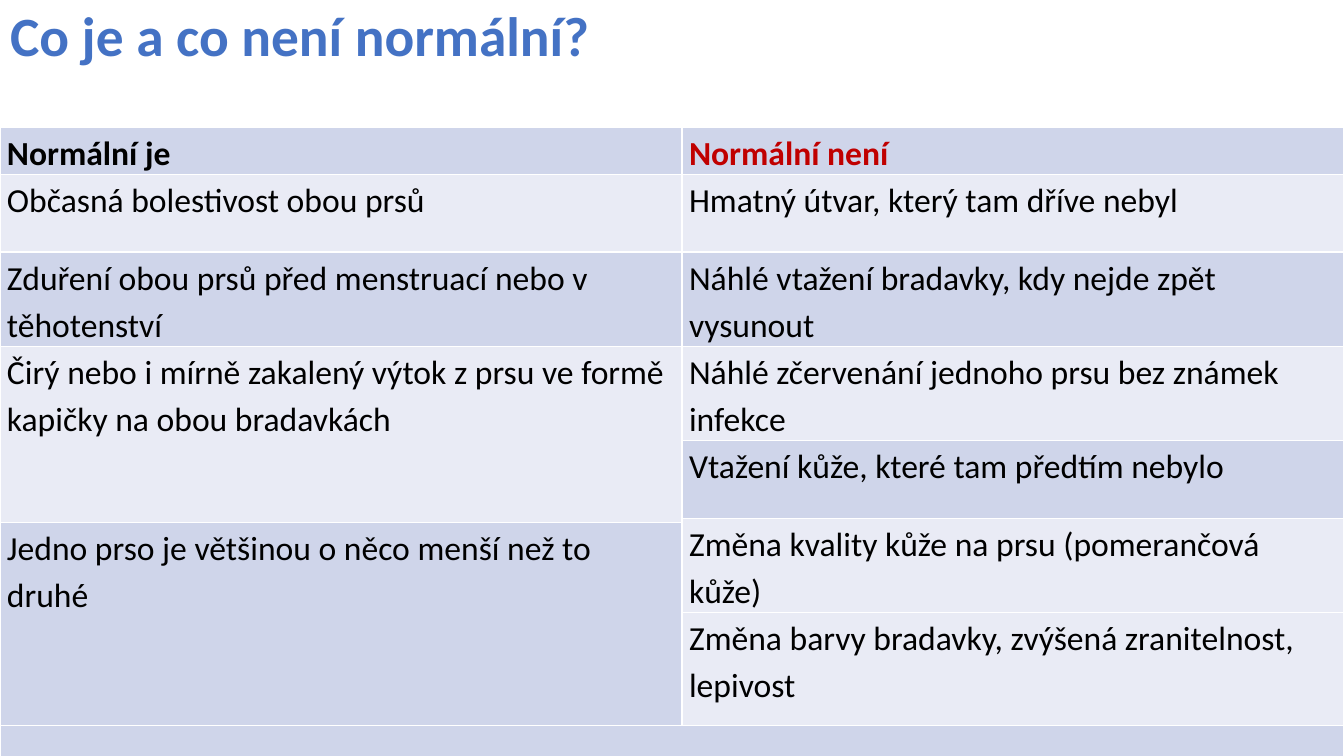
from pptx import Presentation
from pptx.dml.color import RGBColor
from pptx.enum.text import MSO_ANCHOR, MSO_AUTO_SIZE, PP_ALIGN
from pptx.oxml import parse_xml
from pptx.oxml.ns import nsdecls
from pptx.util import Pt

BLUE = RGBColor(0x44, 0x72, 0xC4)
RED = RGBColor(0xC0, 0x00, 0x00)
BLACK = RGBColor(0x00, 0x00, 0x00)
WHITE = RGBColor(0xFF, 0xFF, 0xFF)
DARK = RGBColor(0xCF, 0xD5, 0xEA)
LIGHT = RGBColor(0xE9, 0xEB, 0xF5)

WIDTH, HEIGHT = 960, 540
COLS = [487.2, 472.8]
ROWS = [30.4, 55.4, 62.6, 62.6, 55.4, 2.9, 59, 80.6, 41]

CELLS = [
    (0, 0, 1, 1, DARK, "Normální je"),
    (0, 1, 1, 1, DARK, "Normální není"),
    (1, 0, 1, 1, LIGHT, "Občasná bolestivost obou prsů"),
    (1, 1, 1, 1, LIGHT, "Hmatný útvar, který tam dříve nebyl"),
    (2, 0, 1, 1, DARK, "Zduření obou prsů před menstruací nebo v těhotenství"),
    (2, 1, 1, 1, DARK, "Náhlé vtažení bradavky, kdy nejde zpět vysunout"),
    (3, 0, 3, 1, LIGHT, "Čirý nebo i mírně zakalený výtok z prsu ve formě kapičky na obou bradavkách"),
    (3, 1, 1, 1, LIGHT, "Náhlé zčervenání jednoho prsu bez známek infekce"),
    (4, 1, 1, 1, DARK, "Vtažení kůže, které tam předtím nebylo"),
    (5, 1, 2, 1, LIGHT, "Změna kvality kůže na prsu (pomerančová kůže)"),
    (6, 0, 2, 1, DARK, "Jedno prso je většinou o něco menší než to druhé"),
    (7, 1, 1, 1, LIGHT, "Změna barvy bradavky, zvýšená zranitelnost, lepivost"),
    (8, 0, 1, 2, DARK, ""),
]


class Deck:
    font = "Calibri"

    def __init__(self):
        self.deck = Presentation()
        self.deck.slide_width, self.deck.slide_height = Pt(WIDTH), Pt(HEIGHT)
        self.slide = self.deck.slides.add_slide(self.deck.slide_layouts[5])

    def label(self, frame, text, size, color, bold, space):
        frame.text = text
        frame.word_wrap = True
        for para in frame.paragraphs:
            para.alignment = PP_ALIGN.LEFT
            para.line_spacing = space
            for run in para.runs:
                font = run.font
                font.name, font.size, font.bold = self.font, Pt(size), bold
                font.color.rgb = color

    def title(self, text, top, height):
        shape = self.slide.shapes.title
        shape.left, shape.top = Pt(0), Pt(top)
        shape.width, shape.height = Pt(WIDTH), Pt(height)
        frame = shape.text_frame
        self.label(frame, text, 39.6, BLUE, True, 0.9)
        frame.auto_size = MSO_AUTO_SIZE.NONE
        frame.vertical_anchor = MSO_ANCHOR.TOP
        frame.margin_top = frame.margin_bottom = Pt(0)

    def border(self, cell):
        props = cell._tc.get_or_add_tcPr()
        for side in ("lnL", "lnR", "lnT", "lnB"):
            props.append(parse_xml(
                f'<a:{side} {nsdecls("a")} w="{Pt(1)}"><a:solidFill>'
                f'<a:srgbClr val="{WHITE}"/></a:solidFill></a:{side}>'))

    def cell(self, grid, row, col, down, across, fill, text):
        cell = grid.cell(row, col)
        if down * across > 1:
            cell.merge(grid.cell(row + down - 1, col + across - 1))
        for r in range(row, row + down):
            for c in range(col, col + across):
                part = grid.cell(r, c)
                self.border(part)
                part.fill.solid()
                part.fill.fore_color.rgb = fill
        if text:
            cell.margin_left = cell.margin_right = Pt(5)
            cell.margin_top = cell.margin_bottom = Pt(0)
            color = RED if (row, col) == (0, 1) else BLACK
            self.label(cell.text_frame, text, 24, color, row == 0, 1.15)
            cell.text_frame.paragraphs[0].space_after = Pt(10)

    def table(self, top, cols, rows, cells):
        frame = self.slide.shapes.add_table(
            len(rows), len(cols), Pt(0), Pt(top), Pt(sum(cols)), Pt(sum(rows)))
        grid = frame.table
        grid.first_row = grid.horz_banding = False
        for col, width in zip(grid.columns, cols):
            col.width = Pt(width)
        for row, height in zip(grid.rows, rows):
            row.height = Pt(height)
        for item in cells:
            self.cell(grid, *item)

    def save(self):
        self.deck.save("out.pptx")


def main():
    deck = Deck()
    deck.title("Co je a co není normální?", 6.5, 84)
    deck.table(91, COLS, ROWS, CELLS)
    deck.save()


if __name__ == "__main__":
    main()
